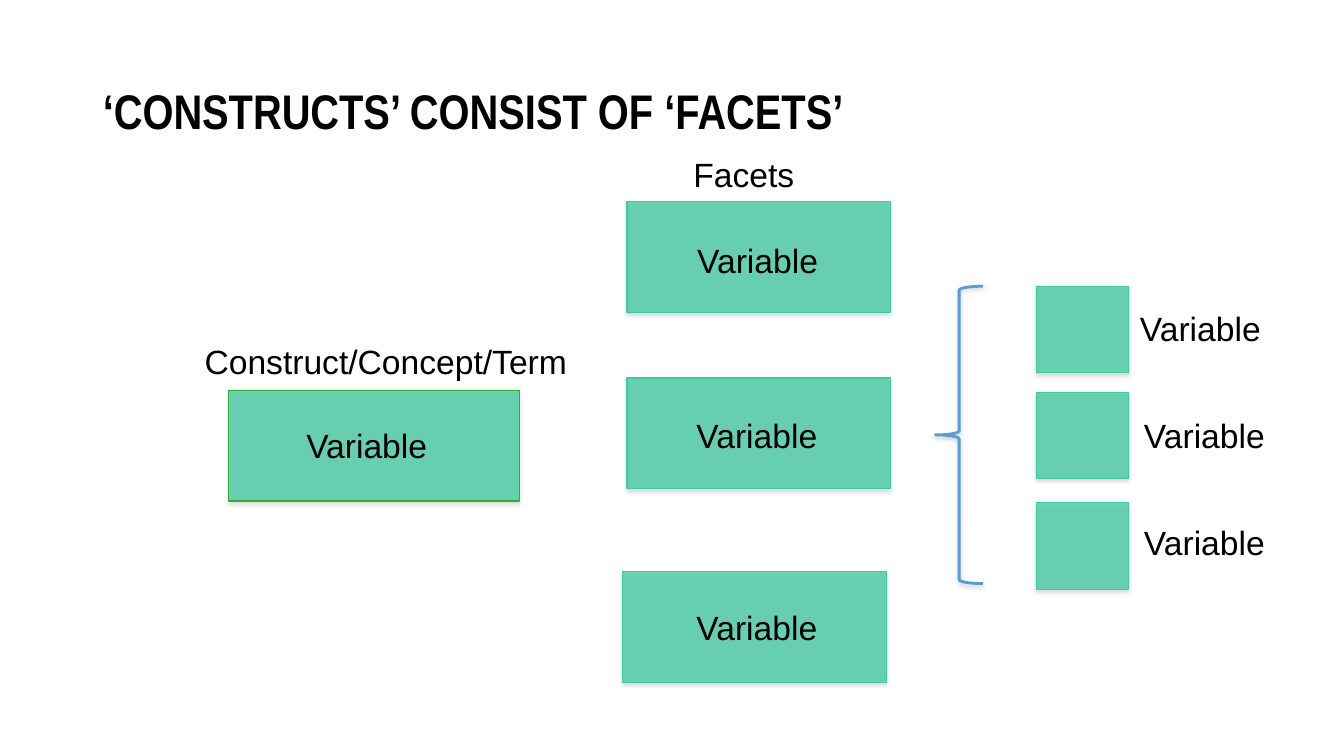
from lxml import etree
from pptx import Presentation
from pptx.dml.color import RGBColor
from pptx.enum.shapes import MSO_SHAPE
from pptx.enum.text import MSO_ANCHOR, MSO_AUTO_SIZE, PP_ALIGN
from pptx.oxml.ns import qn
from pptx.util import Inches, Pt

RECTANGLE, LEFT_BRACE = MSO_SHAPE.RECTANGLE, MSO_SHAPE.LEFT_BRACE
MIDDLE, TOP = MSO_ANCHOR.MIDDLE, MSO_ANCHOR.TOP
LEFT, CENTER = PP_ALIGN.LEFT, PP_ALIGN.CENTER
NO_AUTOFIT, FIT_SHAPE = MSO_AUTO_SIZE.NONE, MSO_AUTO_SIZE.SHAPE_TO_FIT_TEXT
GREEN, DARK_GREEN, BLUE = "3ECA9F", "30B12F", "5B9BD5"
BLACK, GRAY = "000000", "808080"
TITLE_ONLY = 5


def color(hex_code):
    return RGBColor.from_string(hex_code)


class ConstructSlide:
    """Draws styled elements at places given in percent of the slide's size."""

    def __init__(self, deck):
        self.width, self.height = deck.slide_width, deck.slide_height
        self.slide = deck.slides.add_slide(deck.slide_layouts[TITLE_ONLY])

    def place(self, left, top, width, height):
        return (round(left * self.width / 100), round(top * self.height / 100),
                round(width * self.width / 100), round(height * self.height / 100))

    def add_words(self, frame, words, size, font, align, bold=False):
        paragraph = frame.paragraphs[0]
        paragraph.alignment = align
        run = paragraph.add_run()
        run.text = words
        run.font.size, run.font.name, run.font.bold = Pt(size), font, bold
        run.font.color.rgb = color(BLACK)
        return paragraph

    def title(self, words, *area):
        heading = self.slide.shapes.title
        heading.left, heading.top, heading.width, heading.height = self.place(*area)
        frame = heading.text_frame
        frame.word_wrap, frame.auto_size = True, NO_AUTOFIT
        frame.vertical_anchor = MIDDLE
        self.add_words(frame, words, 34.7, "Arial Narrow", LEFT, True).line_spacing = 0.9

    def label(self, words, *area, align=LEFT, wrap=False):
        frame = self.slide.shapes.add_textbox(*self.place(*area)).text_frame
        frame.word_wrap, frame.auto_size = wrap, FIT_SHAPE
        frame.vertical_anchor = TOP
        self.add_words(frame, words, 24, "Arial", align)

    def outline(self, shape, line, weight, shade):
        shape.line.color.rgb, shape.line.width = color(line), Pt(weight)
        shape.shadow.inherit = False
        effects = shape.element.spPr.find(qn("a:effectLst"))
        shadow = etree.SubElement(effects, qn("a:outerShdw"), blurRad=str(Pt(3.1)),
                                  dist=str(Pt(1.7)), dir="5400000", rotWithShape="0")
        tint = etree.SubElement(shadow, qn("a:srgbClr"), val=GRAY)
        etree.SubElement(tint, qn("a:alpha"), val=str(shade * 1000))

    def box(self, *area, line=GREEN):
        block = self.slide.shapes.add_shape(RECTANGLE, *self.place(*area))
        block.fill.solid()
        block.fill.fore_color.rgb = color(GREEN)
        tint = block.element.spPr.find(qn("a:solidFill")).find(qn("a:srgbClr"))
        etree.SubElement(tint, qn("a:alpha"), val="74000")
        self.outline(block, line, 0.75, 35)

    def brace(self, *area):
        bracket = self.slide.shapes.add_shape(LEFT_BRACE, *self.place(*area))
        bracket.adjustments[0], bracket.adjustments[1] = 0.083, 0.5
        bracket.fill.background()
        self.outline(bracket, BLUE, 2, 38)


def main():
    deck = Presentation()
    deck.slide_width, deck.slide_height = Inches(13.33), Inches(7.5)
    page = ConstructSlide(deck)
    page.title("‘CONSTRUCTS’ CONSIST OF ‘FACETS’", 6.9, 5.33, 86.25, 19.33)

    page.box(17.03, 51.6, 21.6, 14.67, line=DARK_GREEN)
    page.label("Variable", 22.05, 55.6, 21.45, 6.67, wrap=True)
    page.label("Construct/Concept/Term", 14.48, 44.4, 28.73, 6.67)

    page.label("Facets", 50.85, 19.73, 9.08, 6.67)
    facets = [(46.65, 26.67, 31.07, CENTER), (46.65, 50, 54.27, LEFT),
              (46.35, 75.6, 79.6, LEFT)]
    for left, top, label_top, align in facets:
        page.box(left, top, 19.58, 14.67)
        page.label("Variable", 51.08, label_top, 10.58, 6.67, align=align)

    page.brace(69.6, 37.87, 3.53, 39.33)
    indicators = [(37.87, 84.08), (51.87, 84.38), (66.53, 84.38)]
    for row, (top, label_left) in enumerate(indicators):
        page.box(77.1, top, 6.9, 11.47)
        page.label("Variable", label_left, 40.13 + 14.13 * row, 10.58, 6.67)

    deck.save("out.pptx")


if __name__ == "__main__":
    main()
